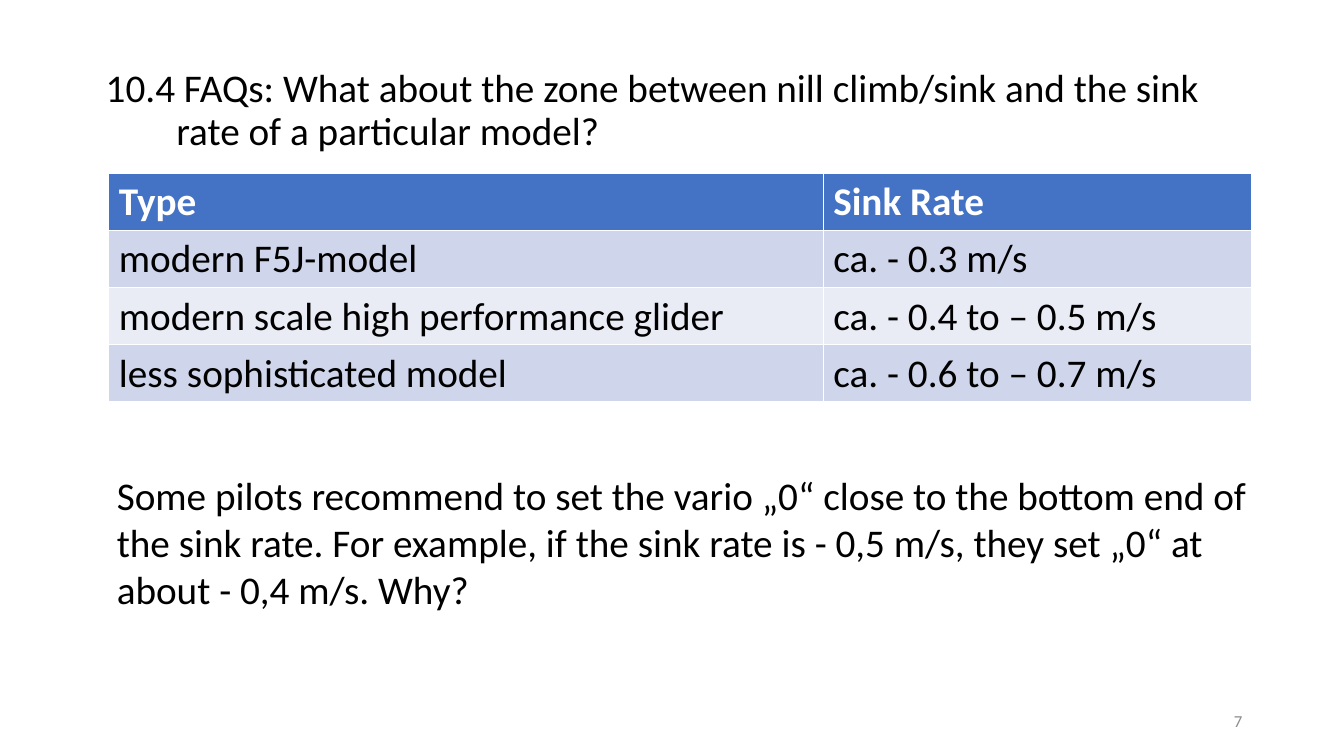
from pptx import Presentation
from pptx.dml.color import RGBColor
from pptx.enum.text import MSO_ANCHOR as Anchor, PP_ALIGN as Align
from pptx.util import Inches, Pt

WIDTH, HEIGHT = Inches(13.33), Inches(7.5)
BLACK, WHITE, GREY = "000000", "FFFFFF", "8C8C8C"
HEAD, BANDS = "4472C4", ("CFD5EA", "E9EBF5")
SHARES = (5, 3)

TITLE = ("10.4 FAQs: What about the zone between nill climb/sink and the sink "
         "rate of a particular model?")
RATES = [
    ("Type", "Sink Rate"),
    ("modern F5J-model", "ca. - 0.3 m/s"),
    ("modern scale high performance glider", "ca. - 0.4 to – 0.5 m/s"),
    ("less sophisticated model", "ca. - 0.6 to – 0.7 m/s"),
]
ADVICE = ("Some pilots recommend to set the vario „0“ close to the bottom end of "
          "the sink rate. For example, if the sink rate is - 0,5 m/s, they set "
          "„0“ at about - 0,4 m/s. Why?")


def place(left, top, width, height):
    """Turn percentages of the slide into lengths."""
    return [round(share * side / 100) for share, side in
            zip((left, top, width, height), (WIDTH, HEIGHT) * 2)]


def color(value):
    return RGBColor.from_string(value)


def write(frame, text, size=28, ink=BLACK, bold=False):
    frame.text = text
    para = frame.paragraphs[0]
    font = para.font
    font.name, font.size, font.bold = "Calibri", Pt(size), bold
    font.color.rgb = color(ink)
    return para


def add_text(slide, area, text, anchor=Anchor.MIDDLE, **style):
    frame = slide.shapes.add_textbox(*place(*area)).text_frame
    frame.word_wrap = True
    frame.vertical_anchor = anchor
    return write(frame, text, **style)


def hang(para, depth):
    """Indent every line but the first."""
    props = para._p.get_or_add_pPr()
    props.set("marL", str(depth))
    props.set("indent", str(-depth))


def add_rates(slide, area):
    left, top, width, height = place(*area)
    table = slide.shapes.add_table(len(RATES), len(SHARES),
                                   left, top, width, height).table
    for column, share in zip(table.columns, SHARES):
        column.width = round(width * share / sum(SHARES))
    for i, row in enumerate(RATES):
        first = i == 0
        for j, text in enumerate(row):
            cell = table.cell(i, j)
            cell.fill.solid()
            cell.fill.fore_color.rgb = color(HEAD if first else BANDS[(i - 1) % 2])
            write(cell.text_frame, text, ink=WHITE if first else BLACK, bold=first)


def main():
    deck = Presentation()
    deck.slide_width, deck.slide_height = WIDTH, HEIGHT
    slide = deck.slides.add_slide(deck.slide_layouts[6])

    number = add_text(slide, (70.67, 92.67, 22.5, 5.33), "7", size=12, ink=GREY)
    number.alignment = Align.RIGHT
    title = add_text(slide, (7.13, 5.33, 86.25, 18.8), TITLE)
    title.line_spacing = 0.9
    hang(title, Inches(0.7))
    add_text(slide, (7.95, 48.93, 86.25, 32.8), ADVICE, Anchor.BOTTOM)
    add_rates(slide, (8.1, 22.93, 85.05, 30.27))

    deck.save("out.pptx")


if __name__ == "__main__":
    main()
